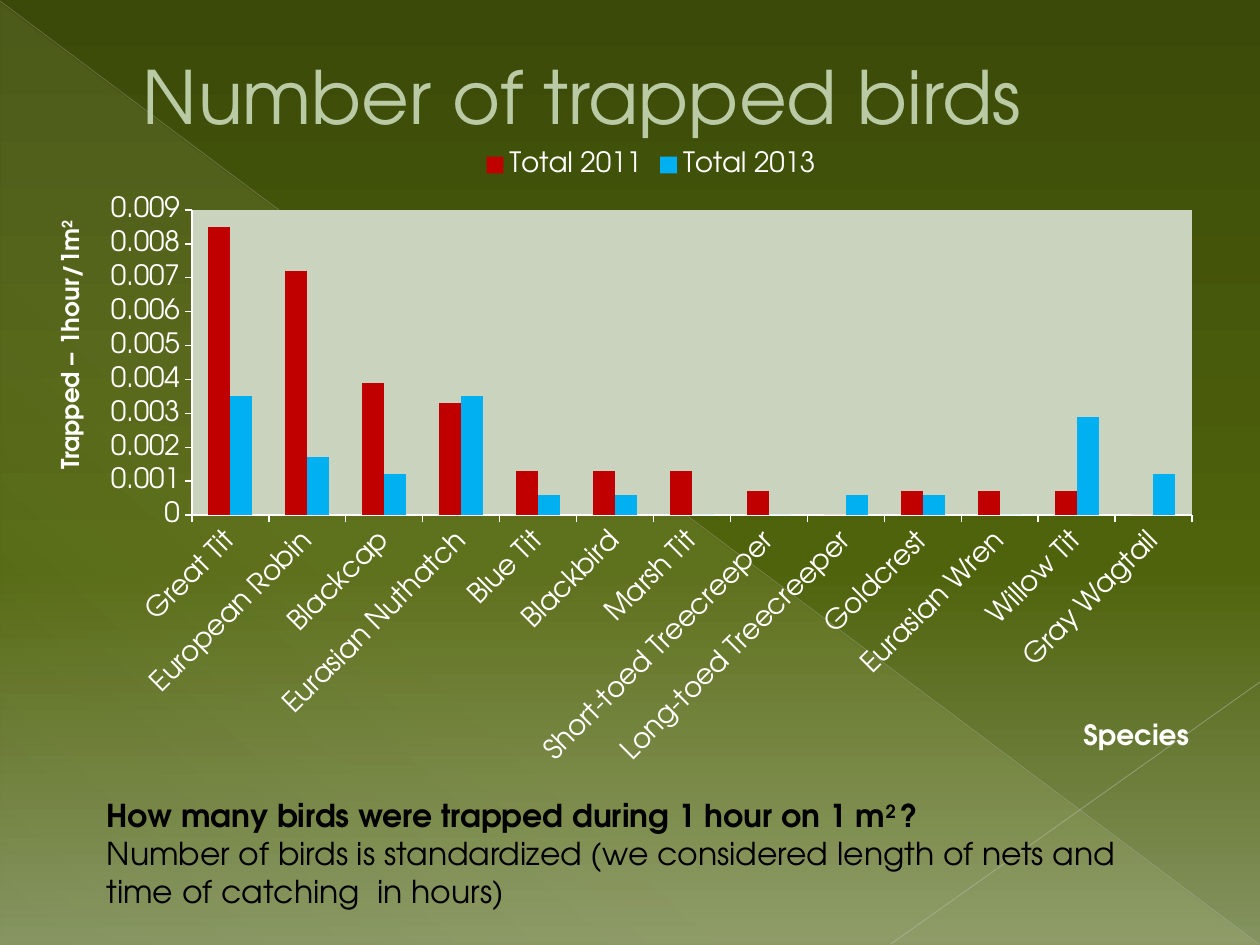
from dataclasses import dataclass

from lxml import etree
from pptx import Presentation
from pptx.chart.data import CategoryChartData
from pptx.dml.color import RGBColor
from pptx.enum.chart import XL_CHART_TYPE, XL_LEGEND_POSITION, XL_TICK_MARK
from pptx.enum.shapes import MSO_CONNECTOR, MSO_SHAPE
from pptx.enum.text import MSO_ANCHOR, PP_ALIGN
from pptx.oxml import parse_xml
from pptx.oxml.ns import nsdecls, qn
from pptx.util import Emu, Pt

COLUMNS = XL_CHART_TYPE.COLUMN_CLUSTERED
LEGEND_TOP = XL_LEGEND_POSITION.TOP
TICK_OUTSIDE = XL_TICK_MARK.OUTSIDE
STRAIGHT = MSO_CONNECTOR.STRAIGHT
RIGHT_TRIANGLE = MSO_SHAPE.RIGHT_TRIANGLE
LEFT = PP_ALIGN.LEFT
MIDDLE = MSO_ANCHOR.MIDDLE

FONT = "TeX Gyre Adventor"
WHITE = RGBColor(0xFF, 0xFF, 0xFF)
BLACK = RGBColor(0x00, 0x00, 0x00)
TITLE_GREEN = RGBColor(0xB9, 0xCA, 0xA5)
TITLE_EDGE = RGBColor(0x72, 0x7D, 0x65)
PLOT_GREEN = RGBColor(0xC9, 0xD3, 0xBE)
RED = RGBColor(0xC0, 0x00, 0x00)
BLUE = RGBColor(0x00, 0xB0, 0xF0)
CREAM = RGBColor(0xFE, 0xFA, 0xC9)
LONG_RAY = RGBColor(0xBA, 0xBD, 0xB3)
SHORT_RAY = RGBColor(0xC1, 0xC4, 0xBC)
SKY_TOP = RGBColor(0x3B, 0x4A, 0x09)
SKY_MIDDLE = RGBColor(0x4F, 0x63, 0x0C)
SKY_BOTTOM = RGBColor(0x84, 0x93, 0x60)

SPECIES = [
    "Great Tit", "European Robin", "Blackcap", "Eurasian Nuthatch", "Blue Tit",
    "Blackbird", "Marsh Tit", "Short-toed Treecreeper", "Long-toed Treecreeper",
    "Goldcrest", "Eurasian Wren", "Willow Tit", "Gray Wagtail",
]


def px(length: int) -> Emu:
    return Emu(round(length * 914400 / 126))


@dataclass
class Box:
    left: int
    top: int
    width: int
    height: int

    def emu(self) -> list[Emu]:
        return [px(v) for v in (self.left, self.top, self.width, self.height)]


@dataclass
class Ray:
    start: tuple[int, int]
    end: tuple[int, int]
    color: RGBColor
    width: float
    opacity: int


@dataclass
class Run:
    text: str
    bold: bool = True
    superscript: bool = False


@dataclass
class Caption:
    box: Box
    paragraphs: list[list[Run]]
    size: int
    color: RGBColor
    rotation: int = 0


@dataclass
class Year:
    name: str
    color: RGBColor
    trapped: list[float]


RAYS = [
    Ray((0, 1), (1259, 944), LONG_RAY, 0.39, 35),
    Ray((1260, 682), (891, 944), SHORT_RAY, 0.47, 45),
]
YEARS = [
    Year("Total 2011", RED, [0.0085, 0.0072, 0.0039, 0.0033, 0.0013, 0.0013, 0.0013,
                             0.0007, 0, 0.0007, 0.0007, 0.0007, 0]),
    Year("Total 2013", BLUE, [0.0035, 0.0017, 0.0012, 0.0035, 0.0006, 0.0006, 0,
                              0, 0.0006, 0.0006, 0, 0.0029, 0.0012]),
]
CAPTIONS = [
    Caption(Box(94, 790, 1091, 127), [
        [Run("How many birds were trapped during 1 hour on 1 m"),
         Run("2 ", superscript=True), Run("?")],
        [Run("Number of birds is standardized (we considered length of nets and "
             "time of catching  in hours)", bold=False)],
    ], 18, BLACK),
    Caption(Box(1071, 711, 189, 59), [[Run("Species")]], 16, WHITE),
    Caption(Box(-146, 244, 433, 43),
            [[Run("Trapped – 1hour/1m"), Run("2", superscript=True)]], 14, WHITE, 270),
]
CHART_BOX = Box(88, 137, 1126, 640)
PLOT_BOX = Box(192, 210, 1000, 305)


def style(target, **values) -> None:
    for name, value in values.items():
        setattr(target, name, value)


def style_font(font, size: int, color: RGBColor, bold: bool = False) -> None:
    style(font, name=FONT, size=Pt(size), bold=bold)
    font.color.rgb = color


def gradient(stops: list[tuple[int, RGBColor, int]], angle: int):
    """Linear gradient from (position %, colour, opacity %) stops."""
    marks = "".join(
        f'<a:gs pos="{pos * 1000}"><a:srgbClr val="{color}">'
        f'<a:alpha val="{opacity * 1000}"/></a:srgbClr></a:gs>'
        for pos, color, opacity in stops)
    return parse_xml(f'<a:gradFill {nsdecls("a")} rotWithShape="1"><a:gsLst>{marks}'
                     f'</a:gsLst><a:lin ang="{angle * 60000}" scaled="0"/></a:gradFill>')


def replace_fill(fill, parent, new_fill) -> None:
    fill.solid()
    parent.replace(parent.find(qn("a:solidFill")), new_fill)


def paint_background(slide) -> None:
    fill = slide.background.fill
    fill.solid()
    properties = slide._element.find(".//" + qn("p:bgPr"))
    replace_fill(fill, properties, gradient(
        [(0, SKY_TOP, 100), (60, SKY_MIDDLE, 100), (100, SKY_BOTTOM, 100)], 90))


def add_glow(slide) -> None:
    glow = slide.shapes.add_shape(RIGHT_TRIANGLE, *Box(1, 3, 1258, 942).emu())
    glow.shadow.inherit = False
    glow.line.fill.background()
    replace_fill(glow.fill, glow._element.spPr,
                 gradient([(0, CREAM, 10), (70, CREAM, 8), (100, CREAM, 1)], 133))


def add_ray(slide, ray: Ray) -> None:
    line = slide.shapes.add_connector(STRAIGHT, *map(px, ray.start + ray.end))
    line.line.width = Pt(ray.width)
    line.line.color.rgb = ray.color
    properties = line._element.spPr
    color = properties.find(".//" + qn("a:srgbClr"))
    etree.SubElement(color, qn("a:alpha")).set("val", str(ray.opacity * 1000))
    etree.SubElement(properties, qn("a:effectLst"))


def add_title(slide) -> None:
    title = slide.shapes.title
    slide.shapes._spTree.append(title._element)  # in front of the decoration
    left, top, width, height = Box(63, 36, 1134, 119).emu()
    style(title, left=left, top=top, width=width, height=height)
    title.text_frame.vertical_anchor = MIDDLE
    paragraph = title.text_frame.paragraphs[0]
    paragraph.alignment = LEFT
    paragraph._p.get_or_add_pPr().set("marL", str(px(67)))
    run = paragraph.add_run()
    run.text = "Number of trapped birds"
    style_font(run.font, 42, TITLE_GREEN)
    run._r.get_or_add_rPr().insert(0, parse_xml(
        f'<a:ln {nsdecls("a")} w="{Pt(0.5)}"><a:solidFill>'
        f'<a:srgbClr val="{TITLE_EDGE}"/></a:solidFill></a:ln>'))


def add_chart(slide) -> None:
    data = CategoryChartData(number_format="General")
    data.categories = SPECIES
    for year in YEARS:
        data.add_series(year.name, year.trapped)
    chart = slide.shapes.add_chart(COLUMNS, *CHART_BOX.emu(), data).chart
    style(chart, has_title=False, has_legend=True)
    style_font(chart.font, 16, WHITE)
    style(chart.legend, position=LEGEND_TOP, include_in_layout=False)
    style_font(chart.legend.font, 16, WHITE)

    plot = chart.plots[0]
    style(plot, gap_width=150, overlap=0, vary_by_categories=False)
    for series, year in zip(plot.series, YEARS):
        series.format.fill.solid()
        series.format.fill.fore_color.rgb = year.color

    for axis in (chart.category_axis, chart.value_axis):
        style(axis, has_major_gridlines=False, major_tick_mark=TICK_OUTSIDE)
        style_font(axis.tick_labels.font, 16, WHITE)
        axis.format.line.color.rgb = WHITE
        axis.format.line.width = Pt(0.75)
    style(chart.value_axis, minimum_scale=0, maximum_scale=0.009, major_unit=0.001)
    labels = chart.category_axis._element.find(qn("c:txPr")).find(qn("a:bodyPr"))
    style_rotation = {"rot": str(-45 * 60000), "vert": "horz"}
    for name, value in style_rotation.items():
        labels.set(name, value)

    # Fixed inner plot area with a pale fill
    fractions = {
        "x": (PLOT_BOX.left - CHART_BOX.left) / CHART_BOX.width,
        "y": (PLOT_BOX.top - CHART_BOX.top) / CHART_BOX.height,
        "w": PLOT_BOX.width / CHART_BOX.width,
        "h": PLOT_BOX.height / CHART_BOX.height,
    }
    sizes = "".join(f'<c:{key} val="{value:.4f}"/>' for key, value in fractions.items())
    area = chart._chartSpace.find(".//" + qn("c:plotArea"))
    for layout in area.findall(qn("c:layout")):
        area.remove(layout)
    area.insert(0, parse_xml(
        f'<c:layout {nsdecls("c")}><c:manualLayout><c:layoutTarget val="inner"/>'
        f'<c:xMode val="edge"/><c:yMode val="edge"/>{sizes}</c:manualLayout></c:layout>'))
    area.append(parse_xml(
        f'<c:spPr {nsdecls("c", "a")}><a:solidFill><a:srgbClr val="{PLOT_GREEN}"/>'
        f'</a:solidFill></c:spPr>'))


def add_caption(slide, caption: Caption) -> None:
    box = slide.shapes.add_textbox(*caption.box.emu())
    box.rotation = caption.rotation
    frame = box.text_frame
    frame.word_wrap = True
    for index, runs in enumerate(caption.paragraphs):
        paragraph = frame.add_paragraph() if index else frame.paragraphs[0]
        for part in runs:
            run = paragraph.add_run()
            run.text = part.text
            style_font(run.font, caption.size, caption.color, part.bold)
            if part.superscript:
                run._r.get_or_add_rPr().set("baseline", "30000")


def main() -> None:
    deck = Presentation()
    style(deck, slide_width=px(1260), slide_height=px(945))
    slide = deck.slides.add_slide(deck.slide_layouts[5])
    paint_background(slide)
    add_glow(slide)
    for ray in RAYS:
        add_ray(slide, ray)
    add_title(slide)
    add_chart(slide)
    for caption in CAPTIONS:
        add_caption(slide, caption)
    deck.save("out.pptx")


if __name__ == "__main__":
    main()
